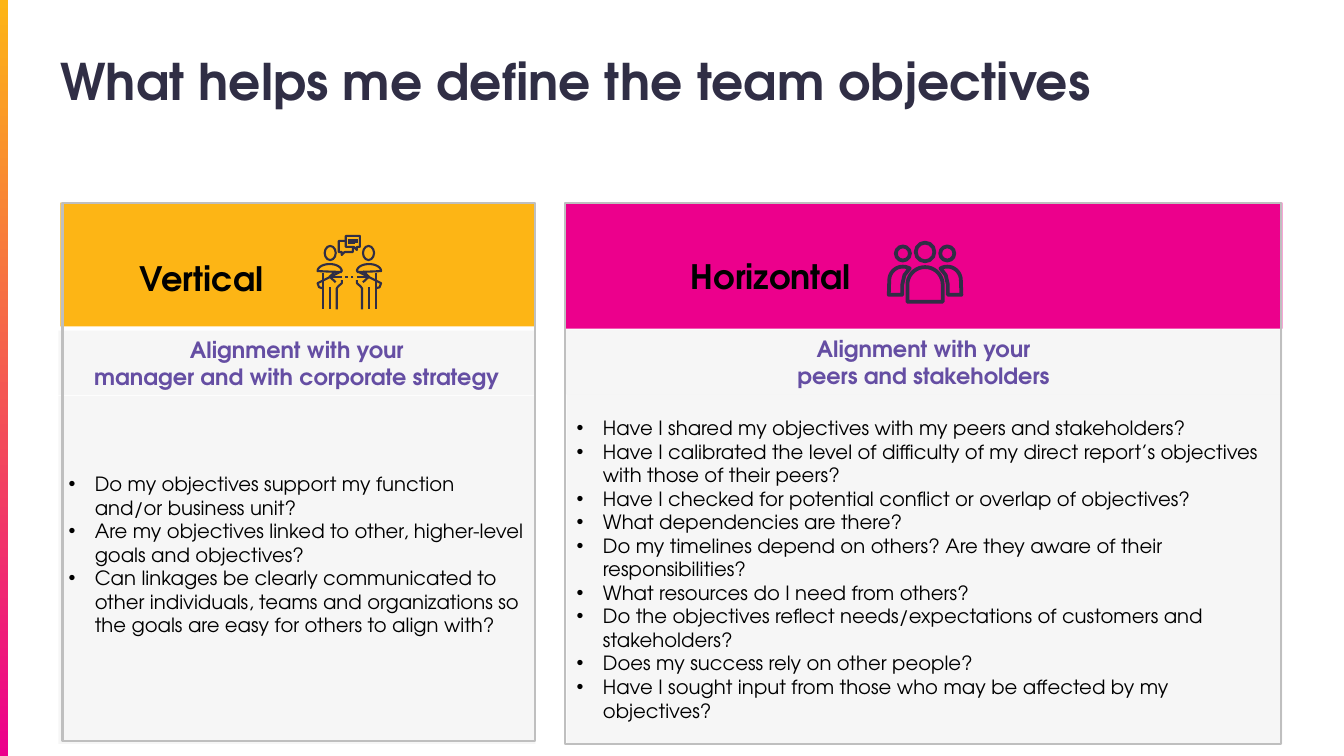
"""Build the slide on vertical and horizontal alignment of team objectives."""
from math import cos, radians, sin

from lxml import etree
from pptx import Presentation
from pptx.dml.color import RGBColor
from pptx.enum.shapes import MSO_CONNECTOR, MSO_SHAPE
from pptx.enum.text import MSO_ANCHOR, MSO_AUTO_SIZE, PP_ALIGN
from pptx.oxml.ns import qn
from pptx.util import Inches, Pt

RECTANGLE, OVAL = MSO_SHAPE.RECTANGLE, MSO_SHAPE.OVAL
STRAIGHT = MSO_CONNECTOR.STRAIGHT
LEFT, CENTER = PP_ALIGN.LEFT, PP_ALIGN.CENTER
MIDDLE, BOTTOM = MSO_ANCHOR.MIDDLE, MSO_ANCHOR.BOTTOM
NO_FIT = MSO_AUTO_SIZE.NONE

COLORS = {
    "ink": "302E45", "black": "000000", "violet": "654EA3", "amber": "FDB515",
    "pink": "EC008C", "pale": "F2F2F2", "border": "BFBFBF",
}
CELL = Inches(0.01)
COLUMNS, ROWS = 1333, 750
FONT = "TeX Gyre Adventor"
TITLE_FONT = {"name": FONT, "size": Pt(36), "bold": True}
LABEL_FONT = {"name": FONT, "size": Pt(24), "bold": True}
HEADING_FONT = {"name": FONT, "size": Pt(16), "bold": True}
BULLET_FONT = {"name": FONT, "size": Pt(14), "bold": False}
BULLET_INDENT = Inches(0.26)

PANELS = [
    {
        "label": "Vertical", "color": "amber",
        "heading": ["Alignment with your", "manager and with corporate strategy"],
        "header_at": (60, 201, 471, 123), "heading_at": (58, 328, 473, 64),
        "list_at": (58, 393, 473, 345), "frame_at": (62, 201, 469, 534),
        "label_at": (127, 251, 146, 50), "bottom_inset": Inches(0.36),
        "questions": [
            "Do my objectives support my function and/or business unit?",
            "Are my objectives linked to other, higher-level goals and objectives?",
            "Can linkages be clearly communicated to other individuals, teams and "
            "organizations so the goals are easy for others to align with?",
        ],
    },
    {
        "label": "Horizontal", "color": "pink",
        "heading": ["Alignment with your", "peers and stakeholders"],
        "header_at": (561, 201, 711, 125), "heading_at": (560, 327, 712, 64),
        "list_at": (562, 391, 710, 347), "frame_at": (560, 201, 711, 537),
        "label_at": (674, 249, 181, 50), "bottom_inset": Inches(0.05),
        "questions": [
            "Have I shared my objectives with my peers and stakeholders?",
            "Have I calibrated the level of difficulty of my direct report’s "
            "objectives with those of their peers?",
            "Have I checked for potential conflict or overlap of objectives?",
            "What dependencies are there?",
            "Do my timelines depend on others? Are they aware of their responsibilities?",
            "What resources do I need from others?",
            "Do the objectives reflect needs/expectations of customers and stakeholders?",
            "Does my success rely on other people?",
            "Have I sought input from those who may be affected by my objectives?",
        ],
    },
]

presentation = Presentation()
presentation.slide_width, presentation.slide_height = COLUMNS * CELL, ROWS * CELL
slide = presentation.slides.add_slide(presentation.slide_layouts[3])


def add_box(kind, at, fill=None, line=None, weight=1.5):
    """Add a preset shape at a grid position given in cells."""
    shape = slide.shapes.add_shape(kind, *(int(value * CELL) for value in at))
    shape.shadow.inherit = False
    if fill:
        shape.fill.solid()
        shape.fill.fore_color.rgb = RGBColor.from_string(COLORS[fill])
    else:
        shape.fill.background()
    if line:
        shape.line.color.rgb = RGBColor.from_string(COLORS[line])
        shape.line.width = Pt(weight)
    else:
        shape.line.fill.background()
    return shape


def write(frame, lines, font, color, alignment):
    """Fill a text frame with one formatted paragraph per line."""
    frame.text = "\n".join(lines)
    for paragraph in frame.paragraphs:
        paragraph.alignment = alignment
        paragraph.space_before = Pt(0)
        for run in paragraph.runs:
            for name, value in font.items():
                setattr(run.font, name, value)
            run.font.color.rgb = RGBColor.from_string(COLORS[color])


bar = add_box(RECTANGLE, (0, 0, 8, ROWS), "amber")
bar.fill.gradient()
bar.fill.gradient_angle = 270
for stop, color in zip(bar.fill.gradient_stops, ("amber", "pink")):
    stop.color.rgb = RGBColor.from_string(COLORS[color])

title = slide.shapes.title
title.left, title.top, title.width, title.height = (
    value * CELL for value in (60, 49, 1213, 61))
title_format = {
    "margin_left": 0, "margin_top": 0, "margin_right": 0, "margin_bottom": 0,
    "vertical_anchor": BOTTOM, "auto_size": NO_FIT, "word_wrap": True,
}
for name, value in title_format.items():
    setattr(title.text_frame, name, value)
write(title.text_frame, ["What helps me define the team objectives"], TITLE_FONT, "ink", LEFT)

for index, panel in enumerate(PANELS, start=1):
    add_box(RECTANGLE, panel["header_at"], panel["color"])

    heading = add_box(RECTANGLE, panel["heading_at"], "pale")
    heading.text_frame.vertical_anchor = MIDDLE
    write(heading.text_frame, panel["heading"], HEADING_FONT, "violet", CENTER)

    questions = slide.placeholders[index]
    questions.left, questions.top, questions.width, questions.height = (
        value * CELL for value in panel["list_at"])
    questions.fill.solid()
    questions.fill.fore_color.rgb = RGBColor.from_string(COLORS["pale"])
    list_format = {
        "vertical_anchor": MIDDLE, "auto_size": NO_FIT, "word_wrap": True,
        "margin_bottom": panel["bottom_inset"],
    }
    for name, value in list_format.items():
        setattr(questions.text_frame, name, value)
    write(questions.text_frame, panel["questions"], BULLET_FONT, "black", LEFT)
    for paragraph in questions.text_frame.paragraphs:
        properties = paragraph._p.get_or_add_pPr()
        properties.set("marL", str(BULLET_INDENT))
        properties.set("indent", str(-BULLET_INDENT))

    for shape in (heading, questions):
        color_element = shape.fill._xPr.find(qn("a:solidFill"))[0]
        etree.SubElement(color_element, qn("a:alpha"), val="65000")

    add_box(RECTANGLE, panel["frame_at"], line="border")
    label = slide.shapes.add_textbox(*(value * CELL for value in panel["label_at"]))
    label.text_frame.word_wrap = False
    write(label.text_frame, [panel["label"]], LABEL_FONT, "black", CENTER)

THIN, THICK = 1.5, 2.7
GROUP_AXIS, PAIR_AXIS = 917.5, 346.5
dome = [(GROUP_AXIS + 17.5 * cos(radians(a)), 282.5 - 17.5 * sin(radians(a)))
        for a in range(0, 181, 10)]
shoulder = [(22 + 13.5 * cos(radians(a)), 278 - 13.5 * sin(radians(a)))
            for a in range(0, 121, 10)]
chest = [(19.5 + 12 * cos(radians(a)), 269 - 7 * sin(radians(a)))
         for a in range(0, 181, 10)]
side_body = [(22.5, 292.5), (36, 292.5), *shoulder, (20.5, 273), (22.5, 282)]
outer_arm = [(7.5, 270), *chest, (31.5, 281), (30, 285), (26.5, 286)]
inner_arm = [(12.5, 307), (12.5, 286), (16 - 5, 284), (7.5, 281), (7.5, 278)]
arrowhead = [(13.5, 269), (19.5, 274.5), (13.5, 280)]

outlines = [
    ([(GROUP_AXIS + 17.5, 299.5), *dome, (GROUP_AXIS - 17.5, 299.5)], True, THICK),
    ([(343, 234), (357, 234), (357, 245), (354, 245), (354, 248),
      (351, 245), (343, 245)], True, THIN),
    ([(343, 239), (336, 239), (336, 250), (339, 250), (339, 253),
      (342, 250), (350, 250), (350, 245)], False, THIN),
]
heads = [(GROUP_AXIS, 250, 18.5, 18.5, THICK)]
strokes = [(345, 238, 355, 238), (345, 240, 355, 240), (345, 241, 352, 241)]
for side in (-1, 1):
    outlines.append(([(GROUP_AXIS + side * x, y) for x, y in side_body], True, THICK))
    for part in (outer_arm, inner_arm, arrowhead):
        outlines.append(([(PAIR_AXIS + side * x, y) for x, y in part], False, THIN))
    heads.append((GROUP_AXIS + side * 22, 251.5, 14, 14, THICK))
    heads.append((PAIR_AXIS + side * 19, 251, 11, 14, THIN))
    for x1, y1, x2, y2 in ((26.5, 271, 26.5, 307), (19.5, 285, 19.5, 307),
                           (19.5, 274.5, 7.5, 274.5), (4, 274.5, 1.5, 274.5)):
        strokes.append((PAIR_AXIS + side * x1, y1, PAIR_AXIS + side * x2, y2))

for points, closed, weight in outlines:
    corners = [(x * CELL, y * CELL) for x, y in points]
    builder = slide.shapes.build_freeform(*corners[0])
    builder.add_line_segments(corners[1:], close=closed)
    outline = builder.convert_to_shape()
    outline.shadow.inherit = False
    outline.fill.background()
    outline.line.color.rgb = RGBColor.from_string(COLORS["ink"])
    outline.line.width = Pt(weight)

for x, y, width, height, weight in heads:
    add_box(OVAL, (x - width / 2, y - height / 2, width, height), line="ink", weight=weight)

for ends in strokes:
    stroke = slide.shapes.add_connector(STRAIGHT, *(int(value * CELL) for value in ends))
    stroke.line.color.rgb = RGBColor.from_string(COLORS["ink"])
    stroke.line.width = Pt(THIN)
    etree.SubElement(stroke._element.spPr, qn("a:effectLst"))

presentation.save("out.pptx")
